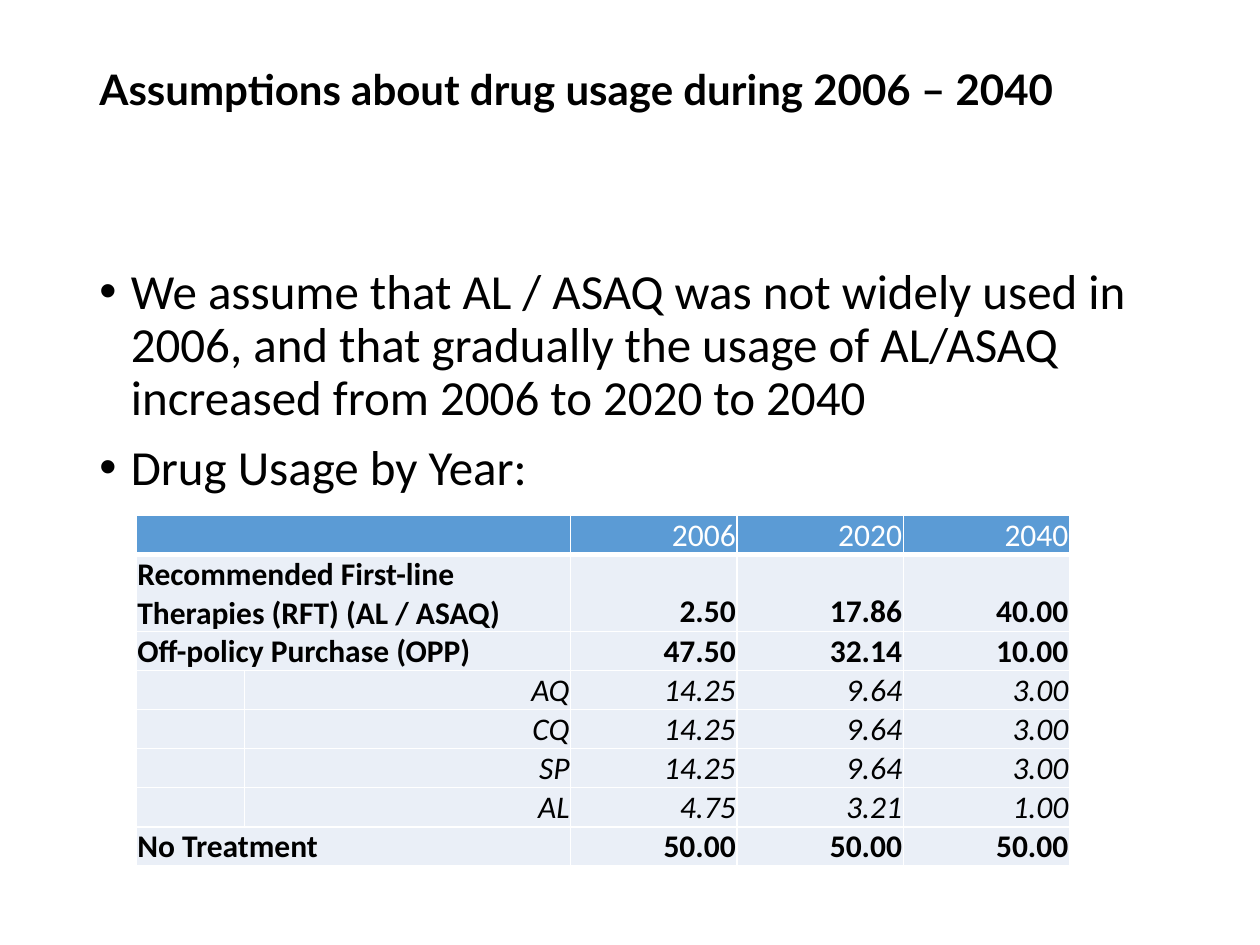
"""Build a slide on assumed drug usage from 2006 to 2040."""
from dataclasses import dataclass

from lxml import etree
from pptx import Presentation, util as u
from pptx.dml.color import RGBColor
from pptx.enum import text
from pptx.oxml import ns

BLACK = RGBColor(0x00, 0x00, 0x00)
WHITE = RGBColor(0xFF, 0xFF, 0xFF)
HEADER_BLUE = RGBColor(0x5B, 0x9B, 0xD5)
PALE_BLUE = RGBColor(0xEA, 0xEF, 0xF7)
COLUMN_WIDTHS = (0.86, 2.59, 1.32, 1.32, 1.32)
ROW_HEIGHT = 0.31
TALL_ROW_HEIGHT = 0.61


@dataclass(frozen=True)
class TextStyle:
    size: int
    name: str = "Calibri"
    color: RGBColor = BLACK
    bold: bool = False
    italic: bool = False


@dataclass(frozen=True)
class UsageRow:
    label: str
    values: tuple[str, str, str]
    style: TextStyle
    fill: RGBColor = PALE_BLUE
    height: float = ROW_HEIGHT
    is_detail: bool = False
    bottom_border: int = 1


TITLE_STYLE = TextStyle(24, "Lato", bold=True)
BODY_STYLE = TextStyle(28)
HEADER_STYLE = TextStyle(18, color=WHITE)
TOTAL_STYLE = TextStyle(18, bold=True)
DETAIL_STYLE = TextStyle(18, italic=True)

TITLE = "Assumptions about drug usage during 2006 – 2040"
BULLETS = (
    "We assume that AL / ASAQ was not widely used in 2006, and that gradually "
    "the usage of AL/ASAQ increased from 2006 to 2020 to 2040",
    "Drug Usage by Year:",
)
DETAILS = (
    ("AQ", ("14.25", "9.64", "3.00")),
    ("CQ", ("14.25", "9.64", "3.00")),
    ("SP", ("14.25", "9.64", "3.00")),
    ("AL", ("4.75", "3.21", "1.00")),
)
USAGE_ROWS = (
    UsageRow("", ("2006", "2020", "2040"), HEADER_STYLE, HEADER_BLUE, bottom_border=3),
    UsageRow("Recommended First-line Therapies (RFT) (AL / ASAQ)",
             ("2.50", "17.86", "40.00"), TOTAL_STYLE, height=TALL_ROW_HEIGHT),
    UsageRow("Off-policy Purchase (OPP)", ("47.50", "32.14", "10.00"), TOTAL_STYLE),
    *(UsageRow(label, values, DETAIL_STYLE, is_detail=True) for label, values in DETAILS),
    UsageRow("No Treatment", ("50.00", "50.00", "50.00"), TOTAL_STYLE),
)


def format_runs(paragraph, style: TextStyle) -> None:
    for run in paragraph.runs:
        run.font.size = u.Pt(style.size)
        run.font.name = style.name
        run.font.color.rgb = style.color
        run.font.bold = style.bold
        run.font.italic = style.italic


def add_text(slide, top: float, height: float, lines: tuple[str, ...], style: TextStyle,
             anchor: text.MSO_ANCHOR):
    shape = slide.shapes.add_textbox(u.Inches(0.69), u.Inches(top),
                                     u.Inches(8.62), u.Inches(height))
    frame = shape.text_frame
    frame.word_wrap = True
    frame.vertical_anchor = anchor
    frame.text = "\n".join(lines)
    for paragraph in frame.paragraphs:
        paragraph.line_spacing = 0.9
        format_runs(paragraph, style)
    return frame


def add_bullet(paragraph) -> None:
    paragraph.space_before = u.Pt(10)
    properties = paragraph._p.get_or_add_pPr()
    properties.set("marL", str(u.Inches(0.25)))
    properties.set("indent", str(u.Inches(-0.25)))
    etree.SubElement(properties, ns.qn("a:buFont"), typeface="Arial")
    etree.SubElement(properties, ns.qn("a:buChar"), char="•")


def add_borders(cell, bottom_width: int) -> None:
    properties = cell._tc.get_or_add_tcPr()
    for side, width in (("L", 1), ("R", 1), ("T", 1), ("B", bottom_width)):
        line = etree.SubElement(properties, ns.qn(f"a:ln{side}"), w=str(u.Pt(width)))
        fill = etree.SubElement(line, ns.qn("a:solidFill"))
        etree.SubElement(fill, ns.qn("a:srgbClr"), val=str(WHITE))


def fill_cell(cell, value: str, row: UsageRow, alignment: text.PP_ALIGN) -> None:
    add_borders(cell, row.bottom_border)
    cell.fill.solid()
    cell.fill.fore_color.rgb = row.fill
    cell.margin_left = cell.margin_right = cell.margin_top = u.Inches(0.01)
    cell.margin_bottom = 0
    cell.vertical_anchor = text.MSO_ANCHOR.BOTTOM
    cell.text_frame.text = value
    paragraph = cell.text_frame.paragraphs[0]
    paragraph.alignment = alignment
    format_runs(paragraph, row.style)


def add_usage_table(slide, rows: tuple[UsageRow, ...]) -> None:
    frame = slide.shapes.add_table(
        len(rows), len(COLUMN_WIDTHS), u.Inches(1.08), u.Inches(4.09),
        u.Inches(sum(COLUMN_WIDTHS)), u.Inches(sum(row.height for row in rows)))
    table = frame.table
    for column, width in zip(table.columns, COLUMN_WIDTHS):
        column.width = u.Inches(width)
    for index, row in enumerate(rows):
        table.rows[index].height = u.Inches(row.height)
        labels = ("", row.label) if row.is_detail else (row.label, "")
        for column, value in enumerate(labels + row.values):
            is_left = column == 0
            alignment = text.PP_ALIGN.LEFT if is_left else text.PP_ALIGN.RIGHT
            fill_cell(table.cell(index, column), value, row, alignment)
        if not row.is_detail:
            table.cell(index, 0).merge(table.cell(index, 1))


def main() -> None:
    presentation = Presentation()
    presentation.slide_width = u.Inches(10)
    presentation.slide_height = u.Inches(7.5)
    slide = presentation.slides.add_slide(presentation.slide_layouts[6])
    add_text(slide, 0.18, 1.09, (TITLE,), TITLE_STYLE, text.MSO_ANCHOR.MIDDLE)
    body = add_text(slide, 2.07, 3.57, BULLETS, BODY_STYLE, text.MSO_ANCHOR.TOP)
    for paragraph in body.paragraphs:
        add_bullet(paragraph)
    add_usage_table(slide, USAGE_ROWS)
    presentation.save("out.pptx")


if __name__ == "__main__":
    main()
